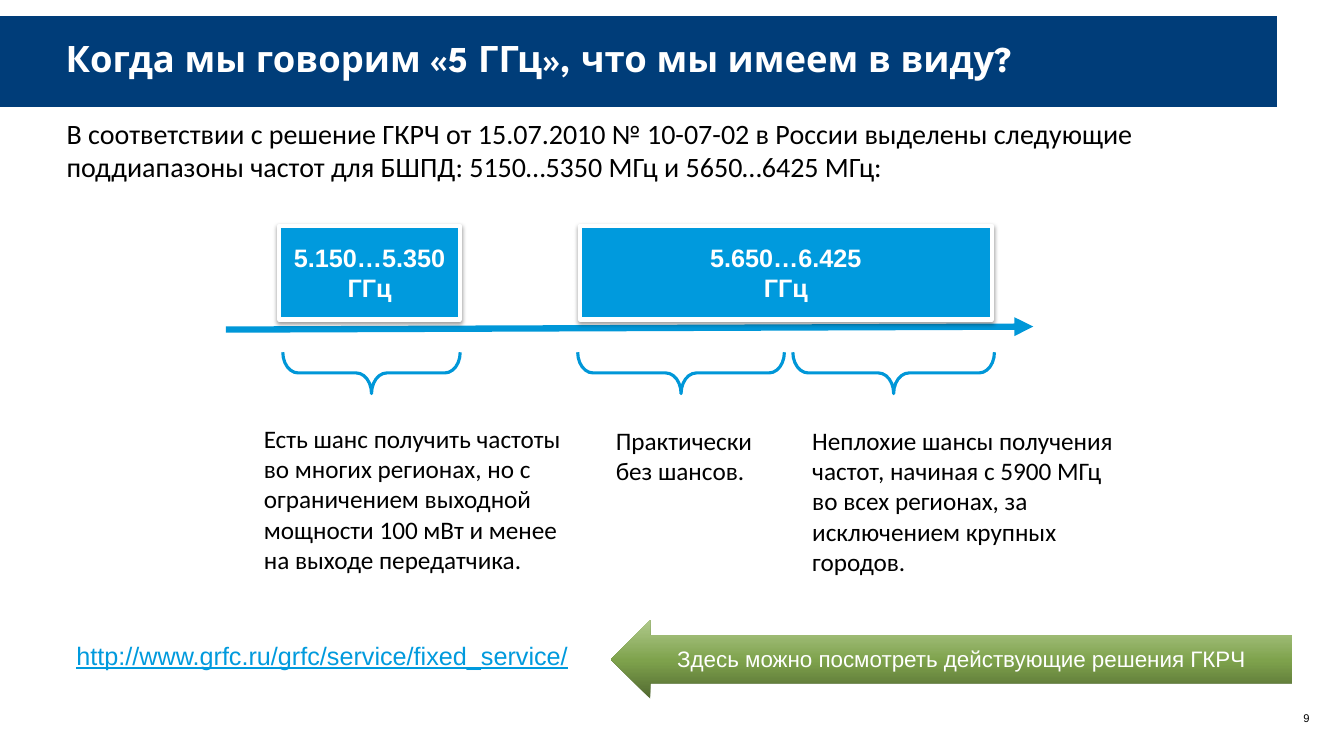
from copy import deepcopy
from pptx import Presentation
from pptx.dml.color import RGBColor
from pptx.enum.shapes import MSO_CONNECTOR as LINK, MSO_SHAPE as KIND
from pptx.enum.text import MSO_ANCHOR as ANCHOR, MSO_AUTO_SIZE as FIT, PP_ALIGN as ALIGN
from pptx.oxml.ns import qn
from pptx.util import Inches, Pt
from lxml.etree import SubElement as Sub

INK, WHITE, NAVY, BLUE, LINE = "000000", "FFFFFF", "003D79", "009ADD", "0097D8"
GREENS = (0, "526931"), (0.48, "7EA24C"), (1, "B0C98C")
SANS, BODY, HEAD = "Arial", "Calibri", "League Spartan"
PAD = (0.1, 0.05, 0.1, 0.05)


def tint(code):
    return RGBColor.from_string(code)


class Page:
    """Places elements by percent of the slide's width and height."""

    def __init__(self, deck):
        self.wide, self.high = deck.slide_width, deck.slide_height
        self.slide = deck.slides.add_slide(deck.slide_layouts[1])
        self.shapes = self.slide.shapes

    def area(self, x, y, w, h):
        return [round(part * side / 100) for part, side in
                zip((x, y, w, h), (self.wide, self.high) * 2)]

    def fill_text(self, frame, text, size, color=INK, face=BODY, bold=False, under=False,
                  align=ALIGN.LEFT, anchor=ANCHOR.TOP, pad=PAD, wrap=True, lead=1.0):
        frame.text = text
        frame.auto_size = FIT.NONE
        frame.word_wrap, frame.vertical_anchor = wrap, anchor
        (frame.margin_left, frame.margin_top,
         frame.margin_right, frame.margin_bottom) = map(Inches, pad)
        for para in frame.paragraphs:
            para.alignment, para.line_spacing = align, lead
            para.space_before = Pt(0)
            for run in para.runs:
                font = run.font
                font.name, font.size, font.color.rgb = face, Pt(size), tint(color)
                font.bold, font.underline = bold, under

    def holder(self, index, box, text, size, **style):
        """Fill a template placeholder, without a bullet."""
        item = self.slide.placeholders[index]
        item.left, item.top, item.width, item.height = self.area(*box)
        self.fill_text(item.text_frame, text, size, **style)
        for para in item.text_frame.paragraphs:
            props = para._p.get_or_add_pPr()
            props.set("marL", "0")
            props.set("indent", "0")
            Sub(props, qn("a:buNone"))

    def label(self, box, text, size, **style):
        item = self.shapes.add_textbox(*self.area(*box))
        self.fill_text(item.text_frame, text, size, **style)

    def shape(self, kind, box, fill=None, line=None, width=1):
        item = self.shapes.add_shape(kind, *self.area(*box))
        item.shadow.inherit = False
        if fill:
            item.fill.solid()
            item.fill.fore_color.rgb = tint(fill)
        else:
            item.fill.background()
        if line:
            item.line.color.rgb, item.line.width = tint(line), Pt(width)
        else:
            item.line.fill.background()
        return item

    def bar(self, box):
        """Title band, sent to the back."""
        item = self.shape(KIND.RECTANGLE, box, NAVY)
        item.element.getparent().insert(2, item.element)

    def band(self, x, w, text):
        item = self.shape(KIND.RECTANGLE, (x, 29.87, w, 12.4), BLUE, WHITE, 3)
        self.fill_text(item.text_frame, text, 18, WHITE, SANS, bold=True,
                       align=ALIGN.CENTER, anchor=ANCHOR.MIDDLE)
        effects = item.element.spPr.find(qn("a:effectLst"))
        shade = Sub(effects, qn("a:outerShdw"), blurRad="40000", dist="20000",
                    dir="5400000", rotWithShape="0")
        Sub(Sub(shade, qn("a:srgbClr"), val=INK), qn("a:alpha"), val="38000")

    def brace(self, x, w):
        """Brace that spans x to x + w and points down."""
        item = self.shape(KIND.RIGHT_BRACE, (x, 46.6, w, 5.47), line=LINE, width=2.25)
        mid, centre = item.left + item.width // 2, item.top + item.height // 2
        item.width, item.height = item.height, item.width
        item.left, item.top = mid - item.width // 2, centre - item.height // 2
        item.rotation = 90
        item.adjustments[0] = 0.37

    def axis(self, *ends):
        item = self.shapes.add_connector(LINK.STRAIGHT, 0, 0, 0, 0)
        item.begin_x, item.begin_y, item.end_x, item.end_y = self.area(*ends)
        item.line.color.rgb, item.line.width = tint(LINE), Pt(4.5)
        Sub(item.line._get_or_add_ln(), qn("a:tailEnd"), type="triangle")
        Sub(item.element.spPr, qn("a:effectLst"))

    def arrow(self, box):
        item = self.shape(KIND.LEFT_ARROW, box)
        item.adjustments[0], item.adjustments[1] = 0.61, 0.5
        item.fill.gradient()
        item.fill.gradient_angle = 90
        stops = item.element.spPr.find(qn("a:gradFill")).find(qn("a:gsLst"))
        stops.append(deepcopy(stops[-1]))
        for stop, (spot, color) in zip(item.fill.gradient_stops, GREENS):
            stop.position, stop.color.rgb = spot, tint(color)


def main():
    deck = Presentation()
    deck.slide_width, deck.slide_height = Inches(13.33), Inches(7.5)
    page = Page(deck)

    page.bar((0, 2.13, 95, 12))
    page.holder(0, (0, 2.67, 93.75, 10.67), "Когда мы говорим «5 ГГц», что мы имеем в виду?",
                26, color=WHITE, face=HEAD, bold=True, anchor=ANCHOR.MIDDLE,
                pad=(0.65, 0.05, 0.1, 0.05), lead=0.9)
    page.holder(1, (4.95, 15.33, 87.83, 8.93),
                "В соответствии с решение ГКРЧ от 15.07.2010 № 10-07-02 в России выделены "
                "следующие поддиапазоны частот для БШПД: 5150…5350 МГц и 5650…6425 МГц:",
                20, anchor=ANCHOR.MIDDLE, pad=(0, 0, 0, 0))

    page.axis(16.8, 43.6, 76.88, 43.2)
    page.band(20.78, 13.43, "5.150…5.350 ГГц")
    page.band(43.13, 30.68, "5.650…6.425\nГГц")

    ranges = (
        (21.04, 13.2, (18.9, 55.33, 24.98, 21.6),
         "Есть шанс получить частоты во многих регионах, но с ограничением "
         "выходной мощности 100 мВт и менее на выходе передатчика."),
        (42.98, 15.38, (45.08, 55.6, 12.98, 9.47), "Практически без шансов."),
        (58.99, 15, (59.7, 55.6, 24.68, 21.6),
         "Неплохие шансы получения частот, начиная с 5900 МГц во всех регионах, "
         "за исключением крупных городов."),
    )
    for left, width, box, note in ranges:
        page.brace(left, width)
        page.label(box, note, 18)

    page.label((4.95, 84, 38.4, 9.47), "http://www.grfc.ru/grfc/service/fixed_service/",
               18, color=BLUE, face=SANS, under=True, wrap=False)
    page.arrow((45.45, 82, 50.7, 10.4))
    page.label((49.65, 84.67, 44.33, 4.93), "Здесь можно посмотреть действующие решения ГКРЧ",
               16, color=WHITE, face=SANS, wrap=False)
    page.label((96.68, 94.13, 1.05, 1.73), "9", 8, face=SANS, align=ALIGN.CENTER,
               anchor=ANCHOR.MIDDLE, pad=(0, 0, 0, 0), wrap=False)
    deck.save("out.pptx")


if __name__ == "__main__":
    main()
